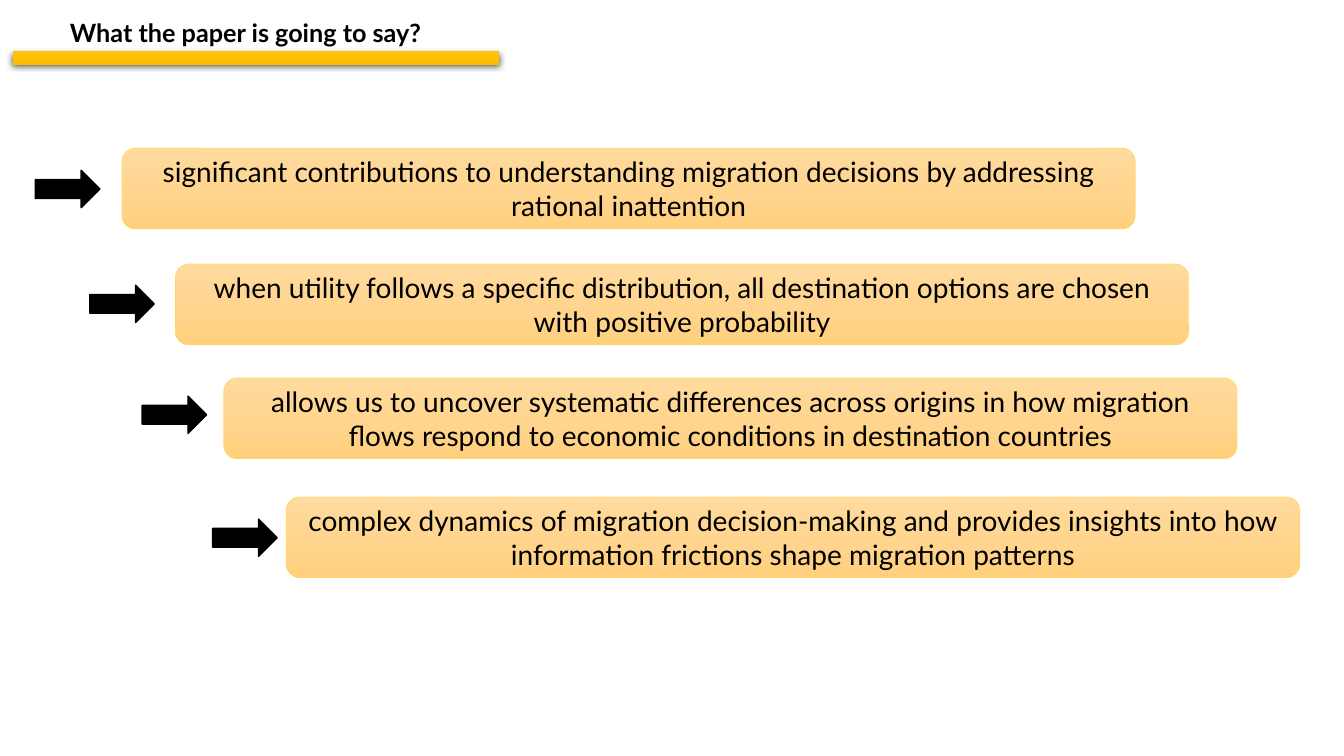
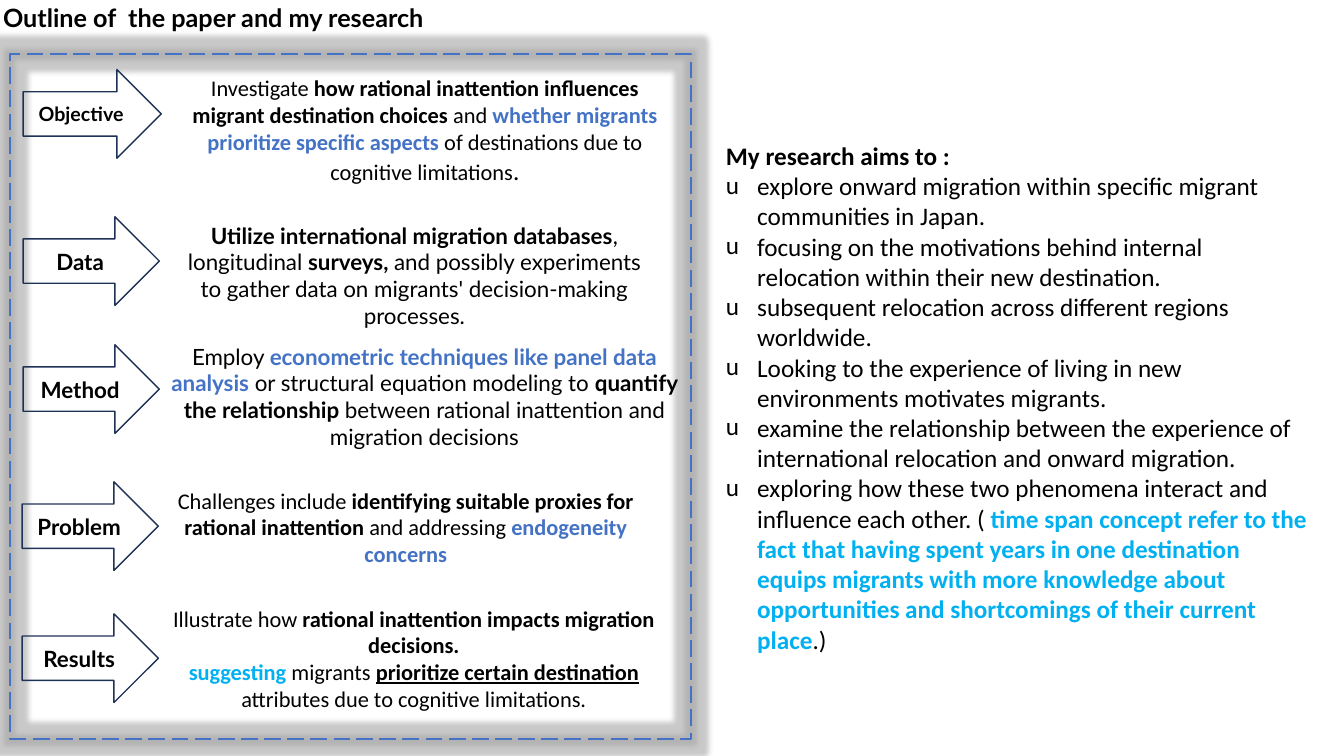
from dataclasses import dataclass
from pptx import Presentation
from pptx.dml.color import RGBColor
from pptx.enum.dml import MSO_LINE
from pptx.enum.shapes import MSO_SHAPE
from pptx.enum.text import MSO_ANCHOR, MSO_AUTO_SIZE, PP_ALIGN
from pptx.oxml import parse_xml
from pptx.oxml.ns import nsdecls, qn
from pptx.util import Inches, Pt

ARROW, CARD = MSO_SHAPE.RIGHT_ARROW, MSO_SHAPE.ROUNDED_RECTANGLE
RECT, MINUS = MSO_SHAPE.RECTANGLE, MSO_SHAPE.MATH_MINUS
TOP, MID = MSO_ANCHOR.TOP, MSO_ANCHOR.MIDDLE
LEFT, MIDDLE = PP_ALIGN.LEFT, PP_ALIGN.CENTER
FIXED, DASH = MSO_AUTO_SIZE.NONE, MSO_LINE.LONG_DASH


@dataclass(frozen=True)
class Theme:
    ink: str = "000000"
    blue: str = "4472C4"
    sky: str = "00B0F0"
    navy: str = "1E3256"
    edge: str = "FFD966"
    glow: str = "A5A5A5"
    bar: tuple = ((0, "FFC64B"), (50, "FFC000"), (100, "E3AB00"))
    card: tuple = ((0, "FFDB9E"), (50, "FFD590"), (100, "FFD07C"))
    head: str = "Lato"
    text: str = "Calibri"
    title: int = 18
    claim: int = 20
    list: int = 18
    step: int = 16
    small: int = 14


T = Theme()
STYLES = {
    "": {},
    "bold": {"bold": True},
    "blue": {"bold": True, "color": T.blue},
    "sky": {"bold": True, "color": T.sky},
    "under": {"bold": True, "underline": True},
    "big": {"size": T.title},
}

CLAIM_HEAD = "What the paper is going to say?"
CLAIMS = [
    (1.21, 1.47, 0.35, 1.69,
     "significant contributions to understanding migration decisions by addressing rational inattention"),
    (1.74, 2.62, 0.89, 2.83,
     "when utility follows a specific distribution, all destination options are chosen with positive probability"),
    (2.22, 3.75, 1.41, 3.93,
     "allows us to uncover systematic differences across origins in how migration flows respond to economic conditions in destination countries"),
    (2.84, 4.93, 2.11, 5.15,
     "complex dynamics of migration decision-making and provides insights into how information frictions shape migration patterns"),
]

PLAN_HEAD = "Outline of  the paper and my research"
STEPS = [
    ("Objective", T.small, (0.23, 0.69, 1.37), T.text, (1.65, 0.69, 5.13, 1.25), [[
        ("Investigate ", ""),
        ("how rational inattention influences migrant destination choices ", "bold"),
        ("and ", ""),
        ("whether migrants prioritize specific aspects", "blue"),
        (" of destinations due to cognitive limitations", ""),
        (".", "big")]]),
    ("Data", T.step, (0.23, 2.15, 1.35), T.head, (1.65, 2.15, 4.92, 1.21), [[
        ("Utilize international migration databases", "bold"),
        (", longitudinal ", ""),
        ("surveys, ", "bold"),
        ("and possibly experiments to gather data on migrants' decision-making processes.", "")]]),
    ("Method", T.step, (0.23, 3.42, 1.35), T.head, (1.57, 3.35, 5.28, 1.21), [[
        ("Employ ", ""),
        ("econometric techniques like panel data analysis", "blue"),
        (" or structural equation modeling to ", ""),
        ("quantify the relationship ", "bold"),
        ("between rational inattention and migration decisions", "")]]),
    ("Problem", T.step, (0.22, 4.78, 1.35), T.text, (1.63, 4.78, 4.79, 0.94), [[
        ("Challenges include ", ""),
        ("identifying suitable proxies for rational inattention", "bold"),
        (" and addressing ", ""),
        ("endogeneity concerns", "blue")]]),
    ("Results", T.step, (0.22, 6.09, 1.35), T.text, (1.6, 5.95, 5.01, 1.21), [
        [("Illustrate how ", ""),
         ("rational inattention impacts migration decisions.", "bold")],
        [("suggesting", "sky"),
         (" migrants ", ""),
         ("prioritize certain destination ", "under"),
         ("attributes due to cognitive limitations.", "")]]),
]
AIMS = [
    [("My research aims to :", "bold")],
    [("explore onward migration within specific migrant communities in Japan.", "")],
    [("focusing on the motivations behind internal relocation within their new destination.", "")],
    [("subsequent relocation across different regions worldwide.", "")],
    [("Looking to the experience of living in new environments motivates migrants.", "")],
    [("examine the relationship between the experience of international relocation and onward migration.", "")],
    [("exploring how these two phenomena interact and influence each other. ( ", ""),
     ("time span concept refer to the fact that having spent years in one destination equips migrants with more knowledge about opportunities and shortcomings of their current place", "sky"),
     (".)", "")],
]


def put(item, **values):
    for name, value in values.items():
        setattr(item, name, value)


def place(shape, box):
    names = ("left", "top", "width", "height")
    put(shape, **dict(zip(names, map(Inches, box))))


def style(font, size, color=T.ink, **values):
    put(font, size=Pt(size), **values)
    font.color.rgb = RGBColor.from_string(color)


def write(shape, lines, size, face, align=MIDDLE, anchor=TOP, mark=None):
    frame = shape.text_frame
    put(frame, word_wrap=True, auto_size=FIXED, vertical_anchor=anchor)
    for i, line in enumerate(lines):
        para = frame.paragraphs[0] if i == 0 else frame.add_paragraph()
        if mark:
            mark(para, i)
        put(para, alignment=align, space_before=Pt(0))
        for text, key in line:
            run = para.add_run()
            run.text = text
            base = {"size": size, "name": face, "bold": False}
            style(run.font, **{**base, **STYLES[key]})


def bullet(para, i):
    props = para._p.get_or_add_pPr()
    step = Inches(0.31) if i else 0
    props.set("marL", str(step))
    props.set("indent", str(-step))
    tags = ['<a:buFont %s typeface="' + T.text + '"/>',
            '<a:buChar %s char="u"/>'] if i else ["<a:buNone %s/>"]
    for tag in tags:
        props.append(parse_xml(tag % nsdecls("a")))


def blend(shape, stops):
    shape.fill.gradient()
    shape.fill.gradient_angle = 270
    rows = shape._element.spPr.find(".//" + qn("a:gsLst"))
    for row in list(rows):
        rows.remove(row)
    for spot, color in stops:
        rows.append(parse_xml(
            f'<a:gs {nsdecls("a")} pos="{spot * 1000}"><a:srgbClr val="{color}"/></a:gs>'))


def effect(shape, tag, color, alpha, **values):
    attrs = " ".join(f'{name}="{value}"' for name, value in values.items())
    fx = shape._element.spPr.find(qn("a:effectLst"))
    fx.append(parse_xml(
        f'<a:{tag} {nsdecls("a")} {attrs}><a:srgbClr val="{color}">'
        f'<a:alpha val="{alpha * 1000}"/></a:srgbClr></a:{tag}>'))


def draw(slide, kind, box, fill=None, line=None, width=1):
    shape = slide.shapes.add_shape(kind, *map(Inches, box))
    shape.shadow.inherit = False
    if isinstance(fill, tuple):
        blend(shape, fill)
    elif fill:
        shape.fill.solid()
        shape.fill.fore_color.rgb = RGBColor.from_string(fill)
    else:
        shape.fill.background()
    if line:
        shape.line.color.rgb = RGBColor.from_string(line)
        shape.line.width = Pt(width)
    else:
        shape.line.fill.background()
    return shape


def start(deck, layout, head, box, align):
    slide = deck.slides.add_slide(deck.slide_layouts[layout])
    title = slide.shapes.title
    place(title, box)
    write(title, [[(head, "bold")]], T.title, T.head, align)
    return slide


def claims(deck):
    slide = start(deck, 5, CLAIM_HEAD, (0.26, 0.08, 4.35, 0.43), MIDDLE)
    slide.shapes.title.text_frame.paragraphs[0].line_spacing = 1.15
    bar = draw(slide, MINUS, (-0.74, 0.3, 6.56, 0.55), T.bar)
    effect(bar, "outerShdw", T.ink, 63, blurRad=Pt(4.5), dist=Pt(1.5),
           dir=5400000, algn="ctr", rotWithShape=0)
    for left, top, x, y, text in CLAIMS:
        card = draw(slide, CARD, (left, top, 10.05, 0.8), T.card, T.edge, 0.5)
        write(card, [[(text, "")]], T.claim, T.head, anchor=MID)
        draw(slide, ARROW, (x, y, 0.64, 0.37), T.ink, T.ink)


def plan(deck):
    slide = start(deck, 1, PLAN_HEAD, (-0.07, -0.03, 6.92, 0.4), LEFT)
    frame = draw(slide, RECT, (0.1, 0.54, 6.75, 6.79), None, T.blue, 1.5)
    frame.line.dash_style = DASH
    effect(frame, "glow", T.glow, 60, rad=Pt(8))
    for label, size, spot, face, box, lines in STEPS:
        arrow = draw(slide, ARROW, (*spot, 0.88), None, T.navy)
        write(arrow, [[(label, "bold")]], size, T.head, anchor=MID)
        note = slide.shapes.add_textbox(*map(Inches, box))
        write(note, lines, T.step, face)
    body = slide.placeholders[1]
    place(body, (7.1, 1.34, 6, 5.25))
    write(body, AIMS, T.list, T.text, LEFT, mark=bullet)


def main():
    deck = Presentation()
    put(deck, slide_width=Inches(13.33), slide_height=Inches(7.5))
    claims(deck)
    plan(deck)
    deck.save("out.pptx")


if __name__ == "__main__":
    main()
